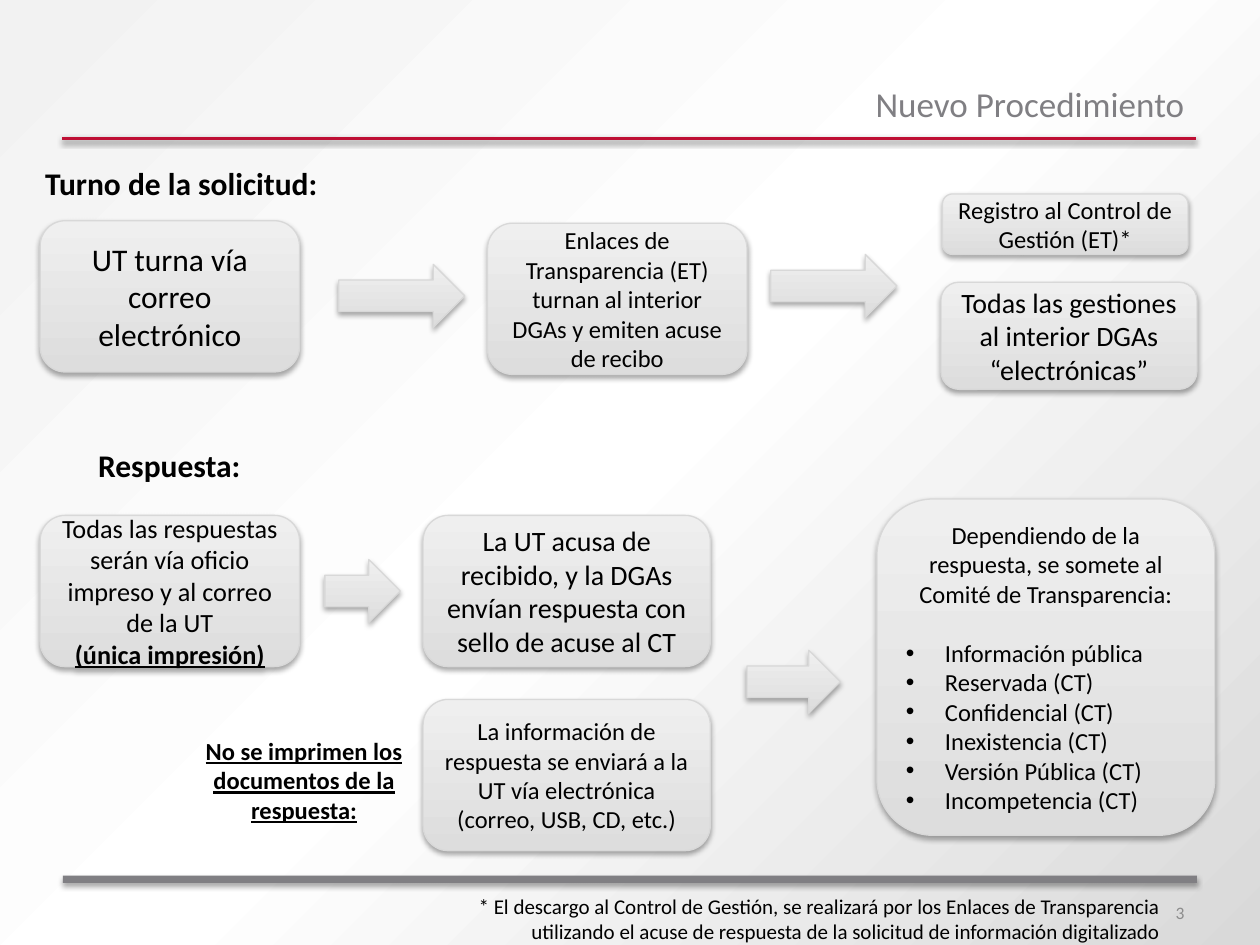
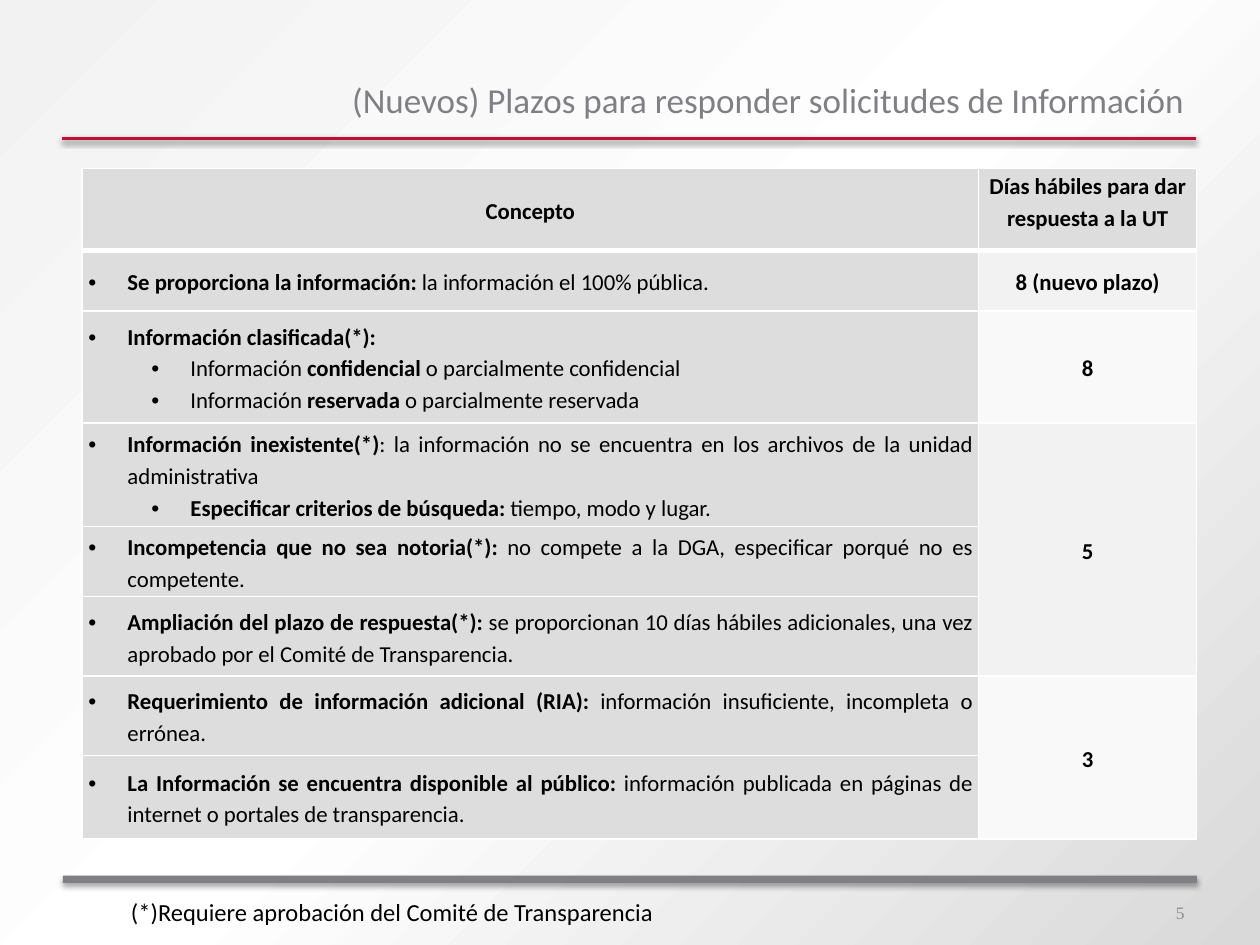
from lxml import etree
from pptx import Presentation
from pptx.dml.color import RGBColor
from pptx.enum import shapes, text
from pptx.oxml import parse_xml
from pptx.oxml.ns import nsdecls, qn
from pptx.util import Cm, Pt

theme = {
    "font": "Calibri", "serif": "Times New Roman",
    "ink": "000000", "grey": "807F83", "pale": "8C8C8C", "red": "BE0F34",
    "low": "DDDDDD", "high": "EFEFEF", "edge": "D8D8D8", "white": "FFFFFF",
    "odd": "F2F2F2", "even": "F9F9F9",
    "title": 20, "head": 18, "text": 14, "cell": 13, "foot": 12, "page": 10,
}
hue = {k: RGBColor.from_string(v) for k, v in theme.items()
       if isinstance(v, str) and len(v) == 6}
LEFT, MID, RIGHT, JUST = (text.PP_ALIGN.LEFT, text.PP_ALIGN.CENTER,
                          text.PP_ALIGN.RIGHT, text.PP_ALIGN.JUSTIFY)
CENTRE = text.MSO_ANCHOR.MIDDLE


def write(frame, paras, size, align, color="ink", font="font", under=False, lead=None):
    """Fill a frame; a paragraph is text or (bullet level, text), and | switches bold."""
    for i, item in enumerate(paras):
        level, words = item if isinstance(item, tuple) else (0, item)
        para = frame.paragraphs[0] if i == 0 else frame.add_paragraph()
        if level:
            props = para._p.get_or_add_pPr()
            props.set("marL", str(Cm(0.79 + 1.27 * (level - 1))))
            props.set("indent", str(-Cm(0.79)))
            etree.SubElement(props, qn("a:buFont")).set("typeface", "Arial")
            etree.SubElement(props, qn("a:buChar")).set("char", "•")
            para.level = level - 1
        para.alignment = align
        if lead:
            para.line_spacing = lead
        for j, part in enumerate(words.split("|")):
            if not part:
                continue
            run = para.add_run()
            run.text = part
            bold = j % 2 == 1
            look = {"size": Pt(size), "name": theme[font], "bold": bold,
                    "underline": under and bold}
            for key, value in look.items():
                setattr(run.font, key, value)
            run.font.color.rgb = hue[color]


def shade(shape, alpha=35, dist=23000):
    """Give a shape or connector its soft shadow below."""
    shape._element.spPr.append(parse_xml(
        f'<a:effectLst {nsdecls("a")}><a:outerShdw blurRad="40000" dist="{dist}" '
        f'dir="5400000" rotWithShape="0"><a:srgbClr val="000000">'
        f'<a:alpha val="{alpha * 1000}"/></a:srgbClr></a:outerShdw></a:effectLst>'))


deck = Presentation()
deck.slide_width, deck.slide_height = Cm(25.4), Cm(19.05)

# Shared frame: background, title, bands and page number
pages = [
    ("Nuevo Procedimiento", 1.32, 1.55, "3", "font"),
    ("(Nuevos) Plazos para responder solicitudes de Información", 1.14, 1.73, "5", "serif"),
]
for name, top, high, number, font in pages:
    slide = deck.slides.add_slide(deck.slide_layouts[5])
    slide.background.fill.gradient()
    grad = slide._element.cSld.find(".//" + qn("a:gradFill"))
    stops = "".join(f'<a:gs pos="{pos}"><a:srgbClr val="{tone}"/></a:gs>' for pos, tone in
                    [(0, "D9D9D9"), (50000, "FFFFFF"), (100000, "F2F2F2")])
    grad.getparent().replace(grad, parse_xml(
        f'<a:gradFill {nsdecls("a")} rotWithShape="1"><a:gsLst>{stops}</a:gsLst>'
        '<a:path path="circle"><a:fillToRect l="100000" t="100000"/></a:path></a:gradFill>'))

    line = slide.shapes.add_connector(shapes.MSO_CONNECTOR.STRAIGHT,
                                      Cm(1.25), Cm(2.79), Cm(24.1), Cm(2.79))
    line.line.color.rgb, line.line.width = hue["red"], Pt(2)
    shade(line, 38, 20000)

    band = slide.shapes.add_shape(shapes.MSO_SHAPE.RECTANGLE,
                                  Cm(1.27), Cm(17.65), Cm(22.86), Cm(0.15))
    band.fill.solid()
    band.fill.fore_color.rgb = hue["grey"]
    band.line.fill.background()
    shade(band)

    page = slide.shapes.add_textbox(Cm(18.21), Cm(17.88), Cm(5.92), Cm(1.02)).text_frame
    page.vertical_anchor = CENTRE
    write(page, [number], theme["page"], RIGHT, "pale", font)

    title = slide.shapes.title
    title.left, title.top, title.width, title.height = Cm(1.27), Cm(top), Cm(22.86), Cm(high)
    title.text_frame.vertical_anchor = CENTRE
    title.text_frame.auto_size = text.MSO_AUTO_SIZE.NONE
    write(title.text_frame, [name], theme["title"], RIGHT, "grey")

flow, terms = deck.slides

# Slide 1: the two flows
ROUND, ARROW = shapes.MSO_SHAPE.ROUNDED_RECTANGLE, shapes.MSO_SHAPE.RIGHT_ARROW
kinds = ["Información pública", "Reservada (CT)", "Confidencial (CT)",
         "Inexistencia (CT)", "Versión Pública (CT)", "Incompetencia (CT)"]
steps = [
    (ROUND, 0.81, 4.45, 5.23, 3.05, 18, ["UT turna vía correo electrónico"]),
    (ARROW, 6.83, 5.33, 2.54, 1.27, 0, []),
    (ROUND, 9.83, 4.5, 5.23, 3.05, 14,
     ["Enlaces de Transparencia (ET) turnan al interior DGAs y emiten acuse de recibo"]),
    (ROUND, 19, 3.91, 4.95, 1.22, 14, ["Registro al Control de Gestión (ET)*"]),
    (ARROW, 15.54, 5.13, 2.54, 1.27, 0, []),
    (ROUND, 18.97, 5.69, 5.16, 2.16, 16,
     ["Todas las gestiones al interior DGAs “electrónicas”"]),
    (ROUND, 0.81, 10.39, 5.23, 3.05, 15,
     ["Todas las respuestas serán vía oficio impreso y al correo de la UT",
      "|(única impresión)|"]),
    (ROUND, 8.53, 10.39, 5.79, 3.05, 16,
     ["La UT acusa de recibido, y la DGAs envían respuesta con sello de acuse al CT"]),
    (ARROW, 6.55, 11.28, 1.52, 1.27, 0, []),
    (ROUND, 8.53, 14.1, 5.79, 3.05, 14,
     ["La información de respuesta se enviará a la UT vía electrónica (correo, USB, CD, etc.)"]),
    (ARROW, 15.06, 13.11, 1.88, 1.27, 0, []),
    (ROUND, 17.68, 10.06, 6.81, 6.78, 14,
     ["Dependiendo de la respuesta, se somete al Comité de Transparencia:"]
     + [(1, kind) for kind in kinds]),
]
for form, x, y, w, h, size, paras in steps:
    step = flow.shapes.add_shape(form, Cm(x), Cm(y), Cm(w), Cm(h))
    step.fill.gradient()
    step.fill.gradient_angle = 90
    for stop, tone in zip(step.fill.gradient_stops, ("low", "high")):
        stop.color.rgb = hue[tone]
    step.line.color.rgb, step.line.width = hue["edge"], Pt(0.75)
    shade(step)
    write(step.text_frame, paras, size, MID, under=True)
    bullets = step.text_frame.paragraphs[1:] if len(paras) > 2 else []
    for i, para in enumerate(bullets):
        para.alignment = LEFT
        para.space_before = Pt(0 if i else 17)

# Headings and notes of both slides
notes = [
    (flow, 0.66, 3.18, 6.05, 1.02, "head", JUST, False, "|Turno de la solicitud:|"),
    (flow, 1.73, 8.86, 3.4, 1.02, "head", JUST, False, "|Respuesta:|"),
    (flow, 3.68, 14.71, 4.9, 2.06, "text", MID, True,
     "|No se imprimen los documentos de la respuesta:|"),
    (flow, 9.37, 17.88, 14.27, 1.8, "foot", RIGHT, True,
     "* El descargo al Control de Gestión, se realizará por los Enlaces de Transparencia "
     "utilizando el acuse de respuesta de la solicitud de información digitalizado"),
    (terms, 2.39, 17.96, 11.15, 0.86, "text", LEFT, False,
     "(*)Requiere aprobación del Comité de Transparencia"),
]
for slide, x, y, w, h, size, align, wrap, words in notes:
    frame = slide.shapes.add_textbox(Cm(x), Cm(y), Cm(w), Cm(h)).text_frame
    frame.word_wrap = wrap
    write(frame, [words], theme[size], align, under=wrap)

# Slide 2: the table of terms; an empty day joins the cell above
rows = [
    (1.65, ["|Concepto|"], "|Días hábiles para dar respuesta a la UT|", "low"),
    (1.22, [(1, "|Se proporciona la información: |la información el 100% pública.")],
     "|8 (nuevo plazo)|", "odd"),
    (2.26, [(1, "|Información clasificada(*):|"),
            (2, "Información |confidencial| o parcialmente confidencial"),
            (2, "Información |reservada| o parcialmente reservada")], "|8|", "even"),
    (2.08, [(1, "|Información inexistente(*)|: la información no se encuentra en los "
                "archivos de la unidad administrativa"),
            (2, "|Especificar criterios de búsqueda: |tiempo, modo y lugar.")], "|5|", "odd"),
    (1.42, [(1, "|Incompetencia que no sea notoria(*): |no compete a la DGA, especificar "
                "porqué no es competente.")], "", "odd"),
    (1.6, [(1, "|Ampliación del plazo de respuesta(*): |se proporcionan 10 días hábiles "
               "adicionales, una vez aprobado por el Comité de Transparencia.")], "", "odd"),
    (1.6, [(1, "|Requerimiento de información adicional (RIA): |información insuficiente, "
               "incompleta o errónea.")], "|3|", "even"),
    (1.68, [(1, "|La Información se encuentra disponible al público: |información publicada "
                "en páginas de internet o portales de transparencia.")], "", "even"),
]
grid = terms.shapes.add_table(len(rows), 2, Cm(1.65), Cm(3.4), Cm(22.47), Cm(13.51)).table
for col, wide in zip(grid.columns, (18.08, 4.39)):
    col.width = Cm(wide)
for r, (high, paras, days, tone) in enumerate(rows):
    grid.rows[r].height = Cm(high)
    for c, (words, fill) in enumerate([(paras, "low"), ([days], tone)]):
        cell = grid.cell(r, c)
        look = {"margin_left": Cm(0.13), "margin_right": Cm(0.13), "margin_top": 0,
                "margin_bottom": 0,
                "vertical_anchor": text.MSO_ANCHOR.TOP if (r, c) == (0, 1) else CENTRE}
        for key, value in look.items():
            setattr(cell, key, value)
        for side in "LRTB":
            thick = (r, side) in [(0, "B"), (1, "T")]
            cell._tc.get_or_add_tcPr().append(parse_xml(
                f'<a:ln{side} {nsdecls("a")} w="{Pt(3 if thick else 1)}"><a:solidFill>'
                f'<a:srgbClr val="{theme["white"]}"/></a:solidFill></a:ln{side}>'))
        cell.fill.solid()
        cell.fill.fore_color.rgb = hue[fill]
        write(cell.text_frame, words, theme["cell"], JUST if r and not c else MID, lead=1.15)
for first, last in [(3, 5), (6, 7)]:
    grid.cell(first, 1).merge(grid.cell(last, 1))

deck.save("out.pptx")
